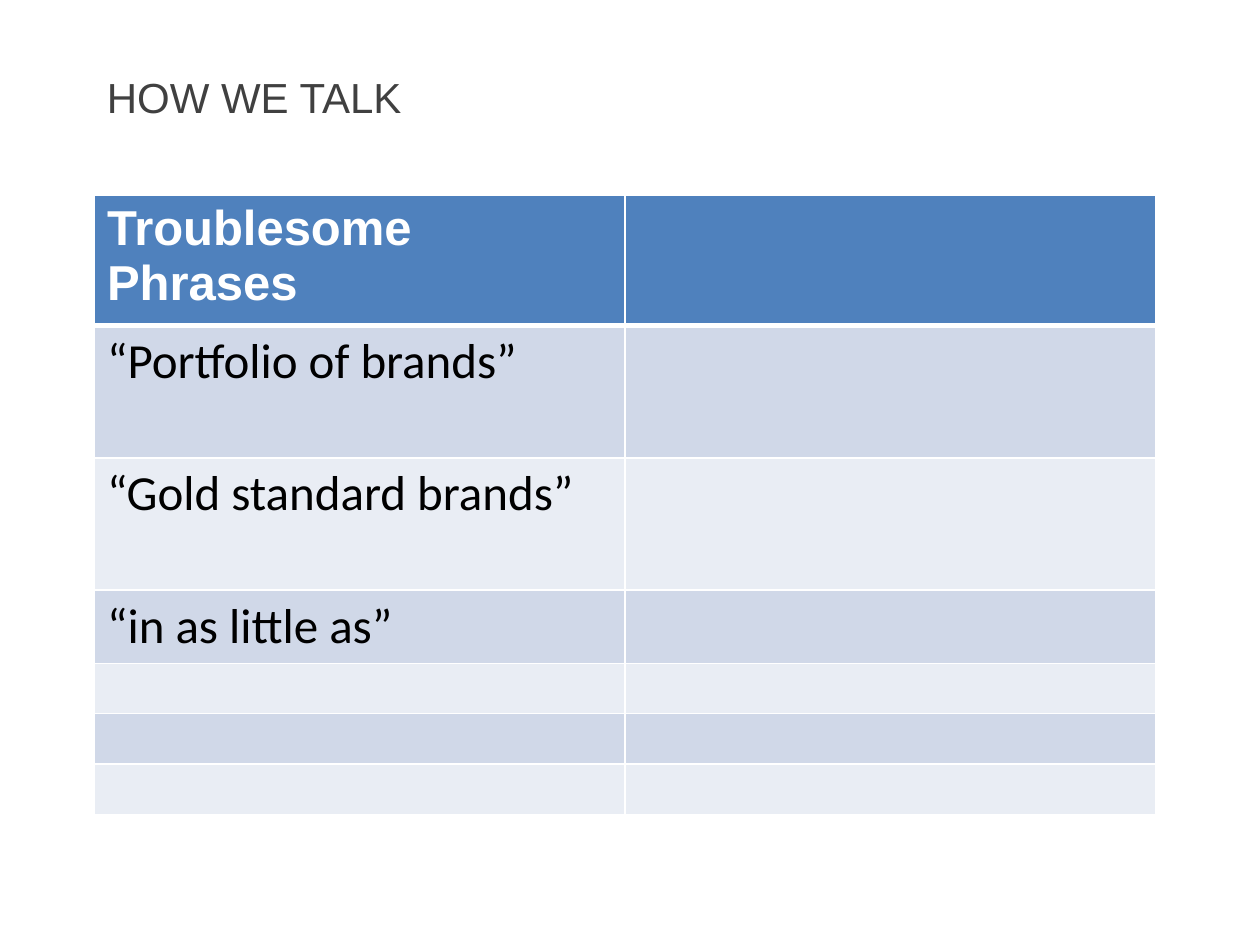
from lxml.etree import SubElement
from pptx import Presentation
from pptx.dml.color import RGBColor
from pptx.enum.text import MSO_ANCHOR
from pptx.oxml.ns import qn
from pptx.util import Inches, Pt

COLORS = {
    "title": "404040",
    "header": "4F81BD",
    "dark_band": "D0D8E8",
    "light_band": "E9EDF4",
    "white": "FFFFFF",
    "black": "000000",
}
PHRASES = [
    "Troublesome Phrases",
    "“Portfolio of brands”",
    "“Gold standard brands”",
    "“in as little as”",
    "",
    "",
    "",
]
ROW_HEIGHTS = [0.96, 1.05, 1.05, 0.58, 0.4, 0.4, 0.4]


def set_font(para, name, size, color, bold=False):
    para.font.name = name
    para.font.size = Pt(size)
    para.font.bold = bold
    para.font.color.rgb = RGBColor.from_string(COLORS[color])


def add_borders(cell, top, bottom):
    """Draw white cell borders; top and bottom are widths in points."""
    properties = cell._tc.get_or_add_tcPr()
    for side, width in (("L", 1), ("R", 1), ("T", top), ("B", bottom)):
        line = SubElement(properties, qn(f"a:ln{side}"), w=str(Pt(width)))
        fill = SubElement(line, qn("a:solidFill"))
        SubElement(fill, qn("a:srgbClr"), val=COLORS["white"])


deck = Presentation()
deck.slide_width, deck.slide_height = Inches(10), Inches(7.5)
page = deck.slides.add_slide(deck.slide_layouts[6])

title = page.shapes.add_textbox(Inches(0.75), Inches(0.33), Inches(7.17), Inches(0.87))
title.text_frame.word_wrap = True
title.text_frame.vertical_anchor = MSO_ANCHOR.MIDDLE
title.text_frame.text = "HOW WE TALK"
set_font(title.text_frame.paragraphs[0], "Arial", 24, "title")

table = page.shapes.add_table(
    len(PHRASES), 2, Inches(0.75), Inches(1.55), Inches(8.42), Inches(sum(ROW_HEIGHTS))
).table

for row, (phrase, height) in enumerate(zip(PHRASES, ROW_HEIGHTS)):
    table.rows[row].height = Inches(height)
    if row == 0:
        band = "header"
    else:
        band = "dark_band" if row % 2 else "light_band"
    for column in range(2):
        cell = table.cell(row, column)
        add_borders(cell, top=3 if row == 1 else 1, bottom=3 if row == 0 else 1)
        cell.fill.solid()
        cell.fill.fore_color.rgb = RGBColor.from_string(COLORS[band])
    if phrase:
        first = table.cell(row, 0)
        first.text = phrase
        para = first.text_frame.paragraphs[0]
        if row == 0:
            set_font(para, "Arial", 28, "white", bold=True)
        else:
            set_font(para, "Calibri", 28, "black")

deck.save("out.pptx")
